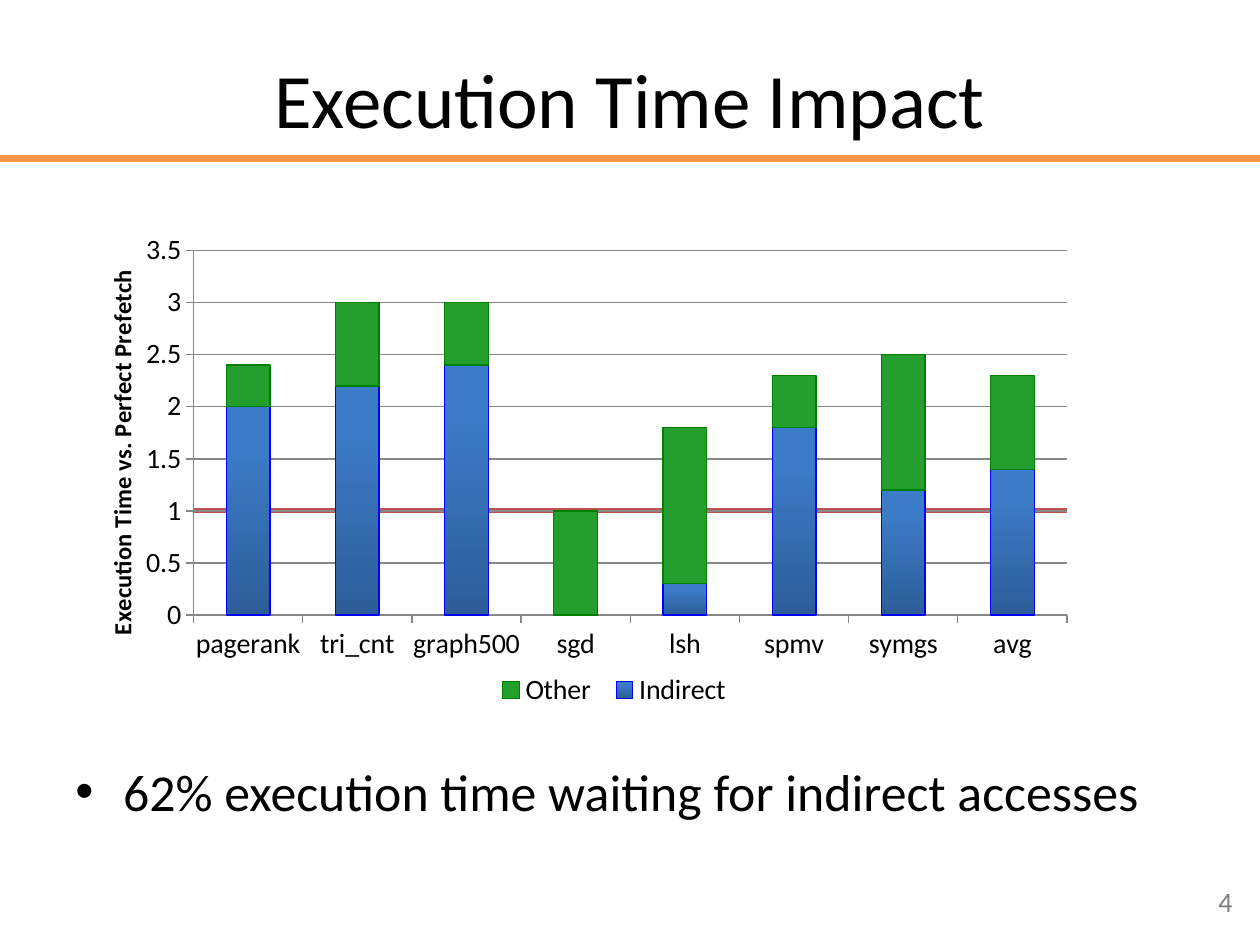
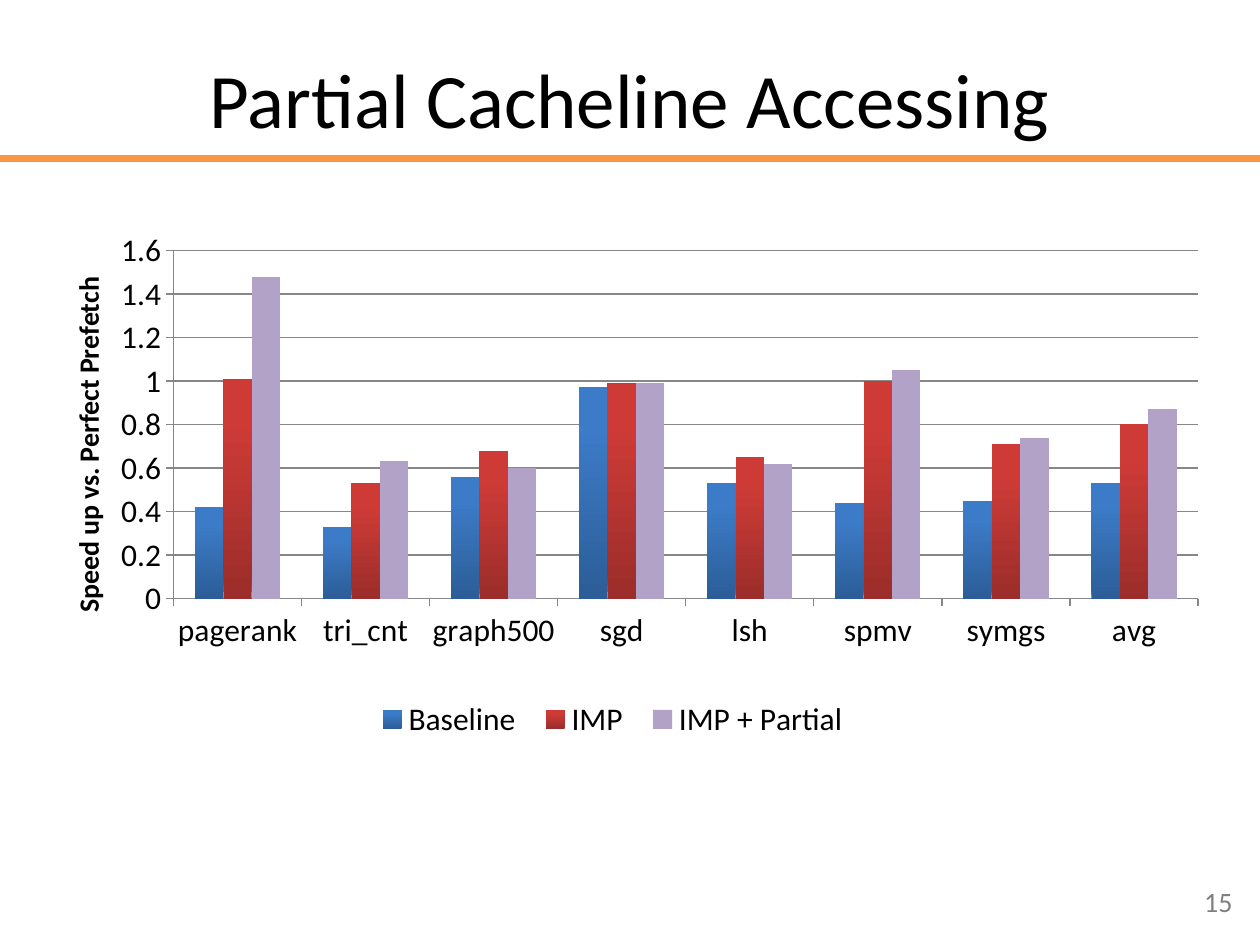
from dataclasses import dataclass
from typing import Optional

from lxml.etree import SubElement
from pptx import Presentation
from pptx.chart.chart import Chart
from pptx.chart.data import CategoryChartData
from pptx.dml.color import RGBColor
from pptx.enum.chart import XL_CHART_TYPE, XL_LEGEND_POSITION, XL_TICK_MARK
from pptx.enum.shapes import MSO_CONNECTOR
from pptx.enum.text import MSO_ANCHOR, PP_ALIGN
from pptx.oxml import parse_xml
from pptx.oxml.ns import nsdecls, qn
from pptx.slide import Slide
from pptx.util import Inches, Pt

SLIDE_WIDTH, SLIDE_HEIGHT = Inches(10), Inches(7.5)
COLUMNS, ROWS = 100, 75


@dataclass(frozen=True)
class Theme:
    font: str = "Calibri"
    text: str = "000000"
    muted: str = "7F7F7F"
    accent: str = "F79646"
    reference: str = "C0504D"
    axis: str = "878787"
    title_size: float = 44
    bullet_size: float = 29.6
    number_size: float = 16


@dataclass(frozen=True)
class Frame:
    left: float
    top: float
    width: float
    height: float

    def lengths(self) -> tuple[int, int, int, int]:
        return (column(self.left), row(self.top), column(self.width), row(self.height))


@dataclass(frozen=True)
class Placement:
    left: float
    top: float
    width: Optional[float] = None
    height: Optional[float] = None


@dataclass(frozen=True)
class Series:
    name: str
    values: tuple[float, ...]
    color: str
    shade: Optional[str] = None
    outline: Optional[str] = None


@dataclass(frozen=True)
class ColumnChart:
    frame: Frame
    kind: XL_CHART_TYPE
    axis_title: str
    title_size: float
    label_size: float
    maximum: float
    step: float
    overlap: int
    plot: Placement
    legend: Placement
    value_title: Placement
    series: tuple[Series, ...]


THEME = Theme()
TITLE_FRAME = Frame(5, 3, 90, 9.5)
BULLET_FRAME = Frame(5, 59.8, 90, 9.7)
NUMBER_FRAME = Frame(75.5, 69.5, 23.3, 4)
RULE_ROW = 12.6
BENCHMARKS = ("pagerank", "tri_cnt", "graph500", "sgd", "lsh", "spmv", "symgs", "avg")
BLUE, BLUE_SHADE = "3C7BC7", "2C5D98"
RED, RED_SHADE = "CE3B37", "9B2D2A"

EXECUTION_TIME = ColumnChart(
    frame=Frame(6.9, 18.1, 88.1, 38.9),
    kind=XL_CHART_TYPE.COLUMN_STACKED,
    axis_title="Execution Time vs. Perfect Prefetch",
    title_size=14,
    label_size=16,
    maximum=3.5,
    step=0.5,
    overlap=100,
    plot=Placement(9.6, 4.6, 78.7, 74.4),
    legend=Placement(36, 90, 23, 8.5),
    value_title=Placement(1.2, 7.6),
    series=(
        Series("Indirect", (2, 2.2, 2.4, 0, 0.3, 1.8, 1.2, 1.4), BLUE, BLUE_SHADE, "0000FF"),
        Series("Other", (0.4, 0.8, 0.6, 1, 1.5, 0.5, 1.3, 0.9), "249E2C", outline="008000"),
    ),
)
SPEED_UP = ColumnChart(
    frame=Frame(3.9, 16.4, 92.2, 44),
    kind=XL_CHART_TYPE.COLUMN_CLUSTERED,
    axis_title="Speed up vs. Perfect Prefetch",
    title_size=16,
    label_size=18,
    maximum=1.6,
    step=0.2,
    overlap=0,
    plot=Placement(10.7, 7.9, 88.2, 62.8),
    legend=Placement(27, 88, 43, 9),
    value_title=Placement(1.3, 11.8),
    series=(
        Series("Baseline", (0.42, 0.33, 0.56, 0.97, 0.53, 0.44, 0.45, 0.53), BLUE, BLUE_SHADE),
        Series("IMP", (1.01, 0.53, 0.68, 0.99, 0.65, 1, 0.71, 0.8), RED, RED_SHADE),
        Series("IMP + Partial", (1.48, 0.63, 0.6, 0.99, 0.62, 1.05, 0.74, 0.87), "B3A2C7"),
    ),
)


def column(count: float) -> int:
    return round(SLIDE_WIDTH * count / COLUMNS)


def row(count: float) -> int:
    return round(SLIDE_HEIGHT * count / ROWS)


def style_font(font, size: float, color: str = THEME.text, bold: bool = False) -> None:
    font.name = THEME.font
    font.size = Pt(size)
    font.bold = bold
    font.color.rgb = RGBColor.from_string(color)


def add_rule(slide: Slide, start: float, end: float, level: float, color: str, width: float) -> None:
    rule = slide.shapes.add_connector(
        MSO_CONNECTOR.STRAIGHT, column(start), row(level), column(end), row(level)
    )
    rule.line.color.rgb = RGBColor.from_string(color)
    rule.line.width = Pt(width)
    SubElement(rule._element.spPr, qn("a:effectLst"))


def add_text(slide: Slide, frame: Frame, text: str):
    text_frame = slide.shapes.add_textbox(*frame.lengths()).text_frame
    text_frame.word_wrap = True
    text_frame.text = text
    return text_frame


def add_bullet(slide: Slide, text: str) -> None:
    paragraph = add_text(slide, BULLET_FRAME, text).paragraphs[0]
    properties = paragraph._p.get_or_add_pPr()
    properties.set("marL", str(Inches(0.38)))
    properties.set("indent", str(-Inches(0.38)))
    SubElement(properties, qn("a:buFont"), typeface="Arial")
    SubElement(properties, qn("a:buChar"), char="•")
    style_font(paragraph.font, THEME.bullet_size)


def add_base_slide(presentation, title: str, number: int) -> Slide:
    slide = presentation.slides.add_slide(presentation.slide_layouts.get_by_name("Title Only"))
    heading = slide.shapes.title
    heading.left, heading.top, heading.width, heading.height = TITLE_FRAME.lengths()
    heading.text_frame.text = title
    heading.text_frame.vertical_anchor = MSO_ANCHOR.MIDDLE
    paragraph = heading.text_frame.paragraphs[0]
    paragraph.alignment = PP_ALIGN.CENTER
    style_font(paragraph.font, THEME.title_size)

    add_rule(slide, 0, COLUMNS, RULE_ROW, THEME.accent, 4)

    number_frame = add_text(slide, NUMBER_FRAME, str(number))
    number_frame.vertical_anchor = MSO_ANCHOR.MIDDLE
    paragraph = number_frame.paragraphs[0]
    paragraph.alignment = PP_ALIGN.RIGHT
    style_font(paragraph.font, THEME.number_size, THEME.muted)
    return slide


def place_part(chart: Chart, query: str, placement: Placement) -> None:
    part = chart._chartSpace.xpath(query)[0]
    for old_layout in part.findall(qn("c:layout")):
        part.remove(old_layout)
    layout = parse_xml(f"<c:layout {nsdecls('c')}><c:manualLayout/></c:layout>")
    settings = {}
    if part.tag == qn("c:plotArea"):
        settings["layoutTarget"] = "inner"
    settings |= {"xMode": "edge", "yMode": "edge"}
    settings |= {"x": placement.left / 100, "y": placement.top / 100}
    if placement.width is not None and placement.height is not None:
        settings |= {"w": placement.width / 100, "h": placement.height / 100}
    for name, value in settings.items():
        SubElement(layout[0], qn(f"c:{name}"), val=str(value))
    overlay = part.find(qn("c:overlay"))
    if overlay is None:
        part.insert(0, layout)
    else:
        overlay.addprevious(layout)


def clear_background(chart: Chart) -> None:
    chart_element = chart._chartSpace.xpath("c:chart")[0]
    plot_area = chart._chartSpace.xpath("c:chart/c:plotArea")[0]
    for attach in (chart_element.addnext, plot_area.append):
        attach(parse_xml(
            f"<c:spPr {nsdecls('c', 'a')}><a:noFill/><a:ln><a:noFill/></a:ln></c:spPr>"
        ))


def style_series(chart_series, series: Series) -> None:
    chart_series.invert_if_negative = False
    fill = chart_series.format.fill
    if series.shade:
        fill.gradient()
        fill.gradient_angle = 90
        for stop, color, position in zip(
            fill.gradient_stops, (series.shade, series.color), (0, 0.8)
        ):
            stop.color.rgb = RGBColor.from_string(color)
            stop.position = position
    else:
        fill.solid()
        fill.fore_color.rgb = RGBColor.from_string(series.color)
    line = chart_series.format.line
    if series.outline:
        line.color.rgb = RGBColor.from_string(series.outline)
        line.width = Pt(0.75)
    else:
        line.fill.background()


def style_axes(chart: Chart, design: ColumnChart) -> None:
    value_axis = chart.value_axis
    value_axis.minimum_scale = 0
    value_axis.maximum_scale = design.maximum
    value_axis.major_unit = design.step
    value_axis.has_major_gridlines = True
    for axis in (chart.category_axis, value_axis):
        axis.major_tick_mark = XL_TICK_MARK.OUTSIDE
        style_font(axis.tick_labels.font, design.label_size)
    for part in (chart.category_axis, value_axis, value_axis.major_gridlines):
        part.format.line.color.rgb = RGBColor.from_string(THEME.axis)
        part.format.line.width = Pt(0.75)
    title_frame = value_axis.axis_title.text_frame
    title_frame.text = design.axis_title
    style_font(title_frame.paragraphs[0].font, design.title_size, bold=True)


def add_column_chart(slide: Slide, design: ColumnChart) -> None:
    data = CategoryChartData()
    data.categories = BENCHMARKS
    for series in design.series:
        data.add_series(series.name, series.values)
    chart = slide.shapes.add_chart(design.kind, *design.frame.lengths(), data).chart
    chart.has_title = False
    style_font(chart.font, design.label_size)
    style_axes(chart, design)

    plot = chart.plots[0]
    plot.gap_width = 150
    plot.overlap = design.overlap
    plot.vary_by_categories = False
    for chart_series, series in zip(plot.series, design.series):
        style_series(chart_series, series)

    chart.has_legend = True
    chart.legend.position = XL_LEGEND_POSITION.RIGHT
    chart.legend.include_in_layout = False
    style_font(chart.legend.font, design.label_size)

    place_part(chart, "c:chart/c:plotArea", design.plot)
    place_part(chart, "c:chart/c:legend", design.legend)
    place_part(chart, "c:chart/c:plotArea/c:valAx/c:title", design.value_title)
    clear_background(chart)


def main() -> None:
    presentation = Presentation()
    presentation.slide_width, presentation.slide_height = SLIDE_WIDTH, SLIDE_HEIGHT

    impact = add_base_slide(presentation, "Execution Time Impact", 4)
    add_rule(impact, 15.3, 84.7, 40.5, THEME.reference, 3)
    add_bullet(impact, "62% execution time waiting for indirect accesses")
    add_column_chart(impact, EXECUTION_TIME)

    partial = add_base_slide(presentation, "Partial Cacheline Accessing", 15)
    add_column_chart(partial, SPEED_UP)

    presentation.save("out.pptx")


if __name__ == "__main__":
    main()
